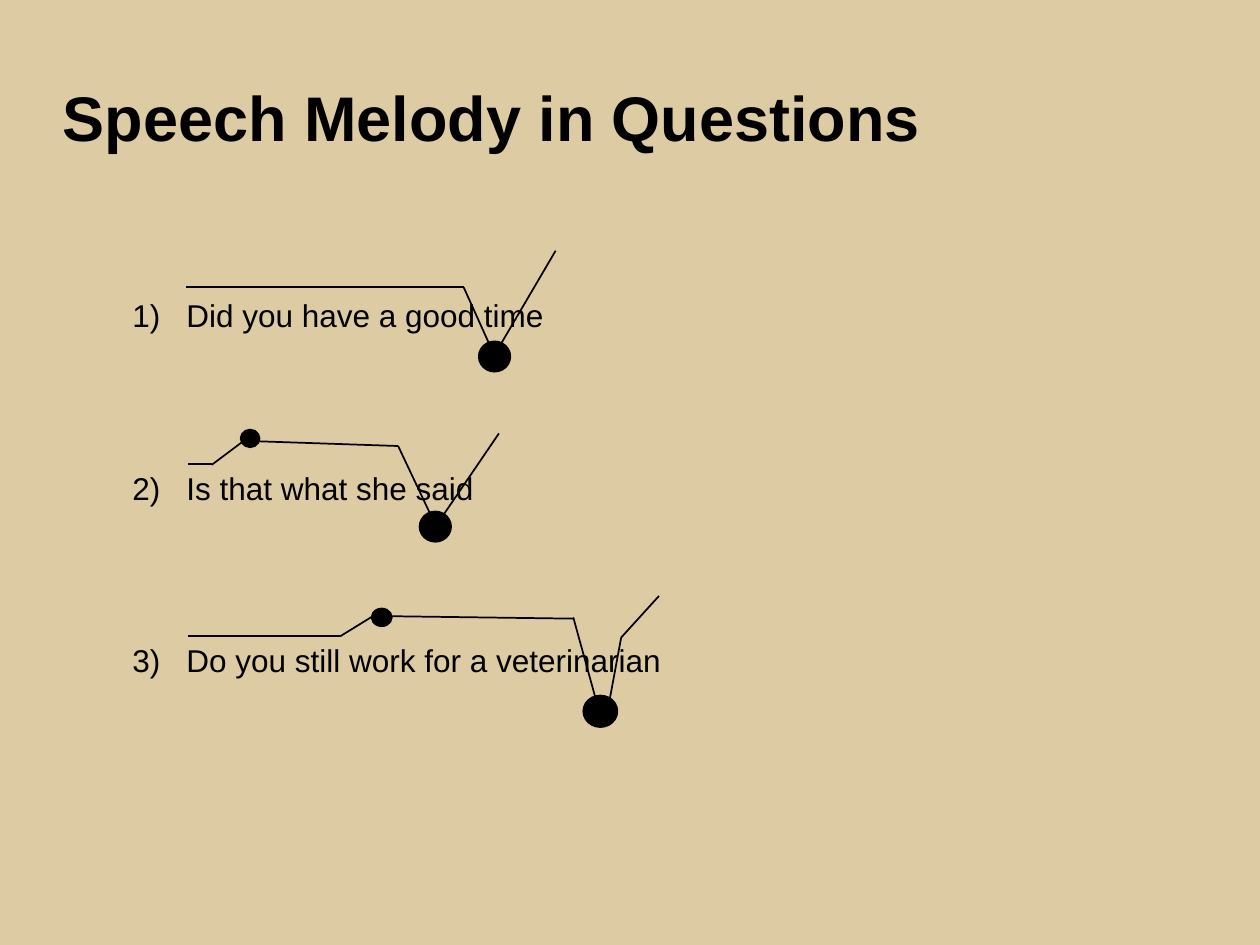
from lxml.etree import SubElement
from pptx import Presentation
from pptx.dml.color import RGBColor
from pptx.enum.shapes import MSO_CONNECTOR, MSO_SHAPE
from pptx.enum.text import MSO_ANCHOR, PP_ALIGN
from pptx.oxml.ns import qn
from pptx.util import Inches, Pt

SAND = RGBColor(0xDD, 0xCB, 0xA4)
BLACK = RGBColor(0, 0, 0)
FONT = "Arial"

SLIDE_W, SLIDE_H = Inches(10), Inches(7.5)
# The slide is a grid of 100 columns by 75 rows of square cells.
CELL = SLIDE_W / 100

TEXT_LEFT, FIRST_ROW, ROW_STEP = 10.5, 23.5, 13.7
NUMBER_WIDTH = 4.3

# Per question: wording, box width, line segments (x1, y1, x2, y2),
# and stress dots (left, top, width, height), all in grid cells.
QUESTIONS = [
    ("Did you have a good time", 35.1,
     [(36.8, 22.8, 39.1, 27.9), (14.8, 22.8, 36.8, 22.8),
      (39.7, 27.4, 44.1, 19.9)],
     [(38, 27.1, 2.5, 2.4)]),
    ("Is that what she said", 29.7,
     [(14.9, 36.8, 16.8, 36.8), (16.8, 36.9, 19.2, 35.1),
      (19.8, 35, 31.6, 35.4), (31.6, 35.4, 34.2, 40.9),
      (34.9, 41.3, 39.6, 34.4)],
     [(19.1, 34.1, 1.5, 1.4), (33.3, 40.6, 2.5, 2.4)]),
    ("Do you still work for a veterinarian", 47.5,
     [(14.9, 50.5, 27, 50.5), (27, 50.5, 29.6, 48.9),
      (30.4, 48.9, 45.5, 49.1), (45.5, 49, 47.4, 55.9),
      (48.3, 56, 49.3, 50.6), (49.3, 50.6, 52.3, 47.3)],
     [(29.5, 48.3, 1.6, 1.4), (46.3, 55.2, 2.7, 2.5)]),
]


def cells(*counts):
    return [round(n * CELL) for n in counts]


def add_text(s, box, text, size, bold=False, hanging=0):
    """Add one line of text; hanging is the width kept for its number."""
    tf = s.shapes.add_textbox(*cells(*box)).text_frame
    tf.word_wrap = True
    tf.vertical_anchor = MSO_ANCHOR.TOP
    tf.margin_left = tf.margin_right = tf.margin_top = tf.margin_bottom = 0
    p = tf.paragraphs[0]
    p.alignment = PP_ALIGN.LEFT
    if hanging:
        indent, = cells(hanging)
        pPr = p._p.get_or_add_pPr()
        pPr.set("marL", str(indent))
        pPr.set("indent", str(-indent))
    r = p.add_run()
    r.text = text
    r.font.name, r.font.size, r.font.bold = FONT, Pt(size), bold
    r.font.color.rgb = BLACK


def add_segment(group, segment):
    line = group.shapes.add_connector(MSO_CONNECTOR.STRAIGHT, *cells(*segment))
    line.line.color.rgb = BLACK
    line.line.width = Pt(1)
    SubElement(line._element.spPr, qn("a:effectLst"))


def add_dot(group, box):
    sp = group.shapes.add_shape(MSO_SHAPE.OVAL, *cells(*box))
    sp.shadow.inherit = False
    sp.fill.solid()
    sp.fill.fore_color.rgb = BLACK
    sp.line.color.rgb = BLACK
    sp.line.width = Pt(1)


def add_melody(s, segments, dots):
    """Group the pitch line of a question with its stress dots."""
    group = s.shapes.add_group_shape()
    for segment in segments:
        add_segment(group, segment)
    for dot in dots:
        add_dot(group, dot)


def main():
    prs = Presentation()
    prs.slide_width, prs.slide_height = SLIDE_W, SLIDE_H
    s = prs.slides.add_slide(prs.slide_layouts[6])
    s.background.fill.solid()
    s.background.fill.fore_color.rgb = SAND

    add_text(s, (5, 6.2, 93.4, 7.5), "Speech Melody in Questions", 36, bold=True)
    for i, (question, width, segments, dots) in enumerate(QUESTIONS):
        box = (TEXT_LEFT, FIRST_ROW + i * ROW_STEP, width, 3)
        add_text(s, box, f"{i + 1})\t{question}", 18, hanging=NUMBER_WIDTH)
        add_melody(s, segments, dots)

    prs.save("out.pptx")


if __name__ == "__main__":
    main()
